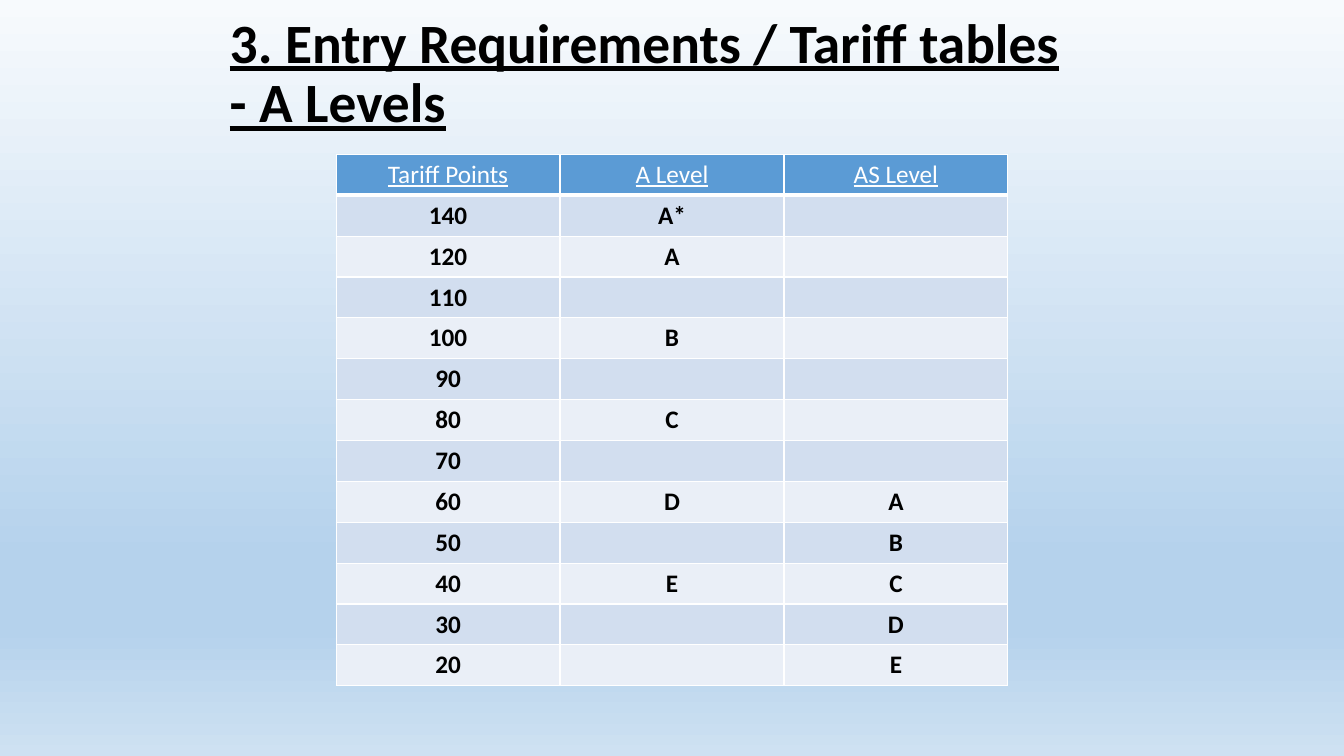
from copy import deepcopy

from lxml.etree import SubElement
from pptx import Presentation
from pptx.dml.color import RGBColor
from pptx.enum.text import MSO_ANCHOR, PP_ALIGN
from pptx.oxml.ns import qn
from pptx.util import Cm, Pt

WHITE, BLACK, HEADER = "FFFFFF", "000000", "5B9BD5"
BANDS = ["D2DEEF", "EAEFF7"]
SKY = [(0, "F7FAFD"), (0.74, "B5D2EC"), (0.83, "B5D2EC"), (1, "CEE1F2")]
COLUMNS = ["Tariff Points", "A Level", "AS Level"]
TARIFF = [
    ("140", "A*", ""), ("120", "A", ""), ("110", "", ""), ("100", "B", ""),
    ("90", "", ""), ("80", "C", ""), ("70", "", ""), ("60", "D", "A"),
    ("50", "", "B"), ("40", "E", "C"), ("30", "", "D"), ("20", "", "E"),
]


def rgb(value):
    return RGBColor.from_string(value)


def write(tf, text, size=18, color=BLACK, bold=False, underline=False,
          align=PP_ALIGN.LEFT, spacing=None):
    p = tf.paragraphs[0]
    p.text = text
    p.alignment = align
    p.line_spacing = spacing
    for r in p.runs:
        r.font.name = "Calibri"
        r.font.size = Pt(size)
        r.font.bold = bold
        r.font.underline = underline
        r.font.color.rgb = rgb(color)


def add_background(s, stops):
    fill = s.background.fill
    fill.gradient()
    fill.gradient_angle = 270
    gs_list = s.element.find(".//" + qn("a:gsLst"))
    while len(gs_list) < len(stops):
        gs_list.append(deepcopy(gs_list[0]))
    for stop, (position, color) in zip(fill.gradient_stops, stops):
        stop.position = position
        stop.color.rgb = rgb(color)


def add_title(s, text, left, top, width, height):
    tf = s.shapes.add_textbox(Cm(left), Cm(top), Cm(width), Cm(height)).text_frame
    tf.word_wrap = True
    tf.vertical_anchor = MSO_ANCHOR.MIDDLE
    write(tf, text, size=39.6, bold=True, underline=True, spacing=0.9)


def set_borders(cell, color, bottom=1):
    """Put the four lines before the fill, as the schema orders them."""
    tc_pr = cell._tc.get_or_add_tcPr()
    for i, (side, width) in enumerate([("L", 1), ("R", 1), ("T", 1), ("B", bottom)]):
        ln = SubElement(tc_pr, qn("a:ln" + side), w=str(Pt(width)))
        SubElement(SubElement(ln, qn("a:solidFill")), qn("a:srgbClr"), val=color)
        tc_pr.insert(i, ln)


def add_tariff_table(s, rows, left, top, width, height):
    table = s.shapes.add_table(len(rows), len(rows[0]), Cm(left), Cm(top),
                               Cm(width), Cm(height)).table
    for i, row in enumerate(rows):
        header = i == 0
        for j, text in enumerate(row):
            cell = table.cell(i, j)
            cell.fill.solid()
            cell.fill.fore_color.rgb = rgb(HEADER if header else BANDS[(i - 1) % 2])
            set_borders(cell, WHITE, bottom=3 if header else 1)
            write(cell.text_frame, text, color=WHITE if header else BLACK,
                  bold=not header, underline=header, align=PP_ALIGN.CENTER)


def main():
    prs = Presentation()
    prs.slide_width, prs.slide_height = Cm(33.87), Cm(19.05)
    s = prs.slides.add_slide(prs.slide_layouts[6])
    add_background(s, SKY)
    add_title(s, "3. Entry Requirements / Tariff tables\n- A Levels",
              5.54, 0.33, 22.86, 3.12)
    add_tariff_table(s, [COLUMNS] + TARIFF, 8.47, 3.89, 16.93, 13.39)
    prs.save("out.pptx")


if __name__ == "__main__":
    main()
